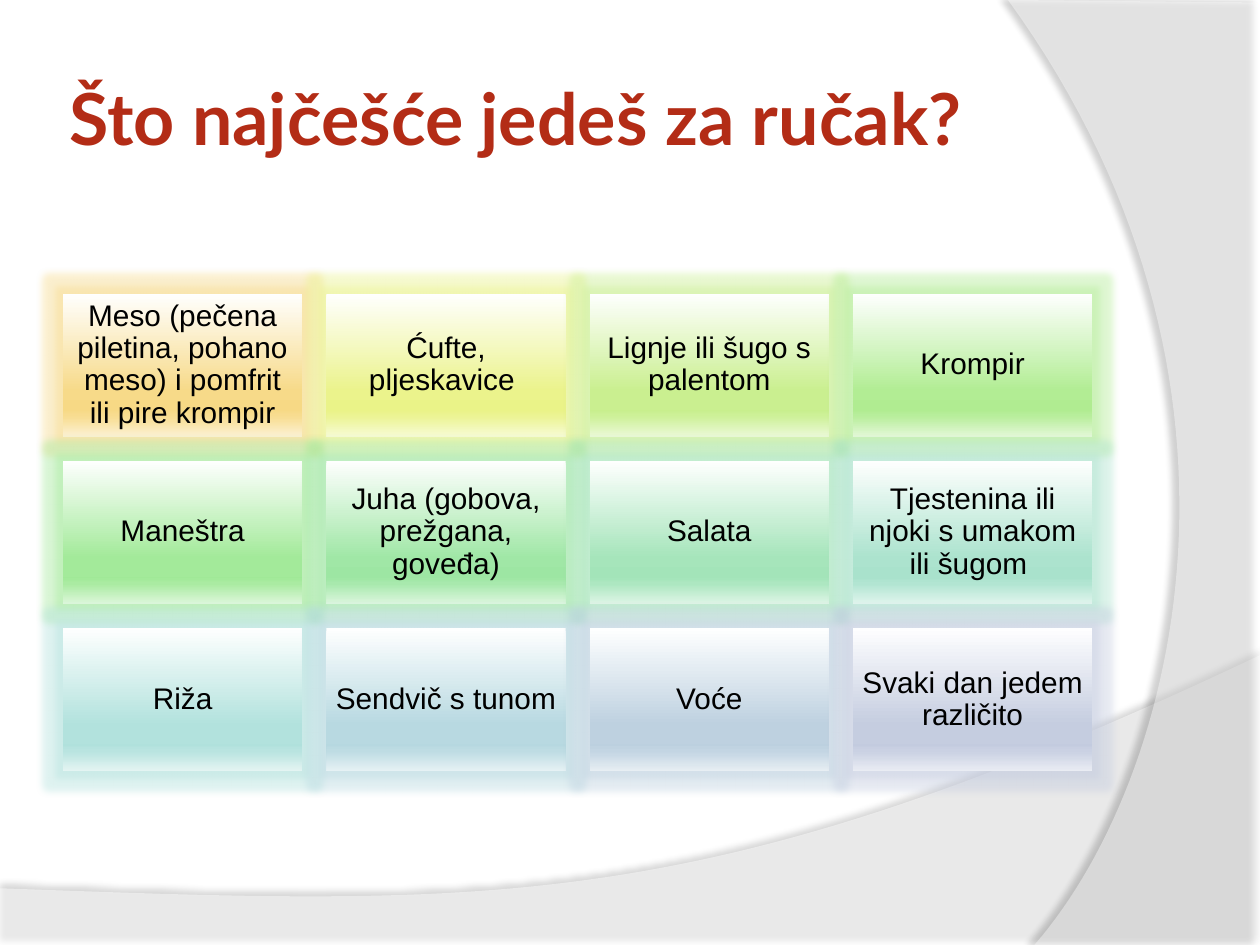
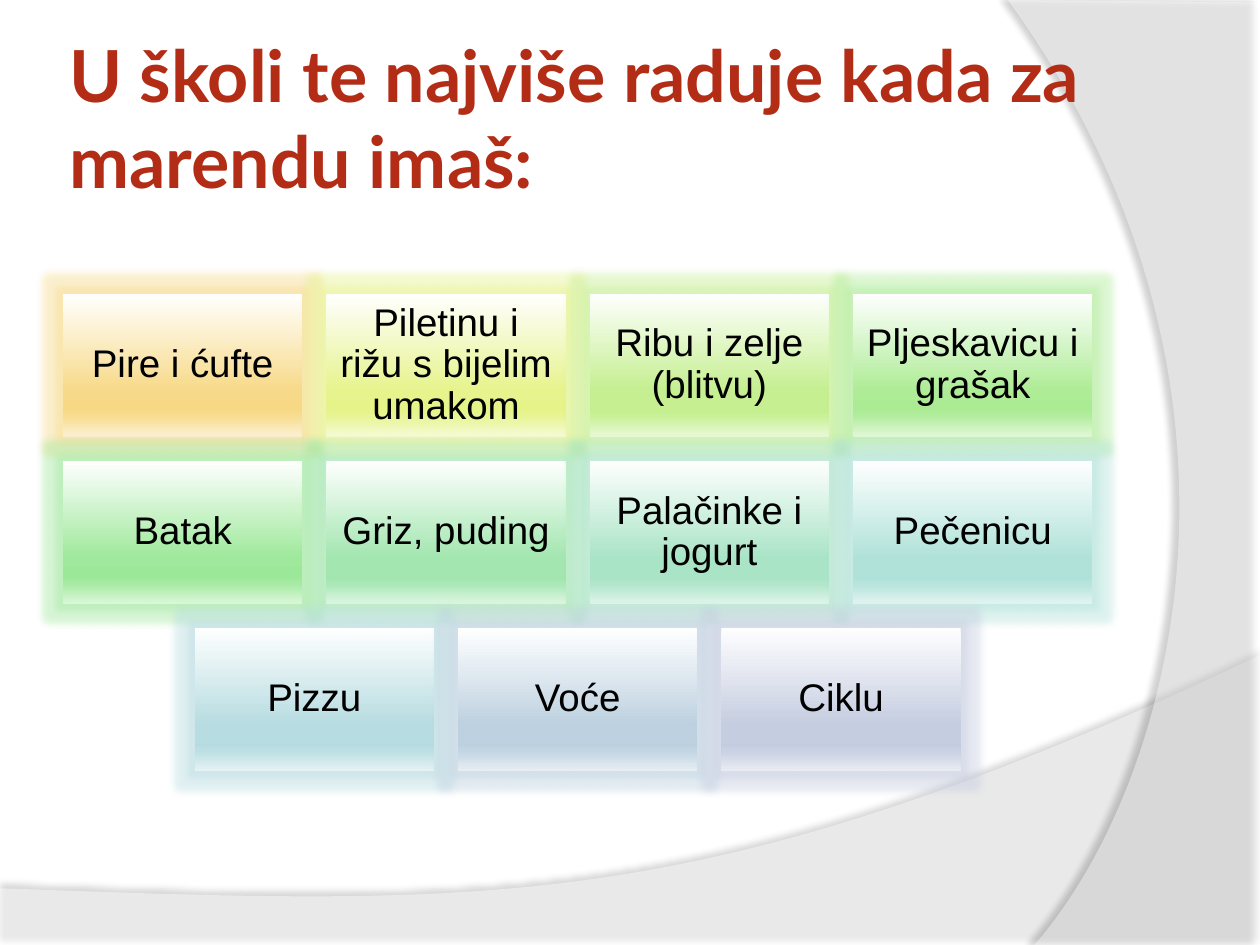
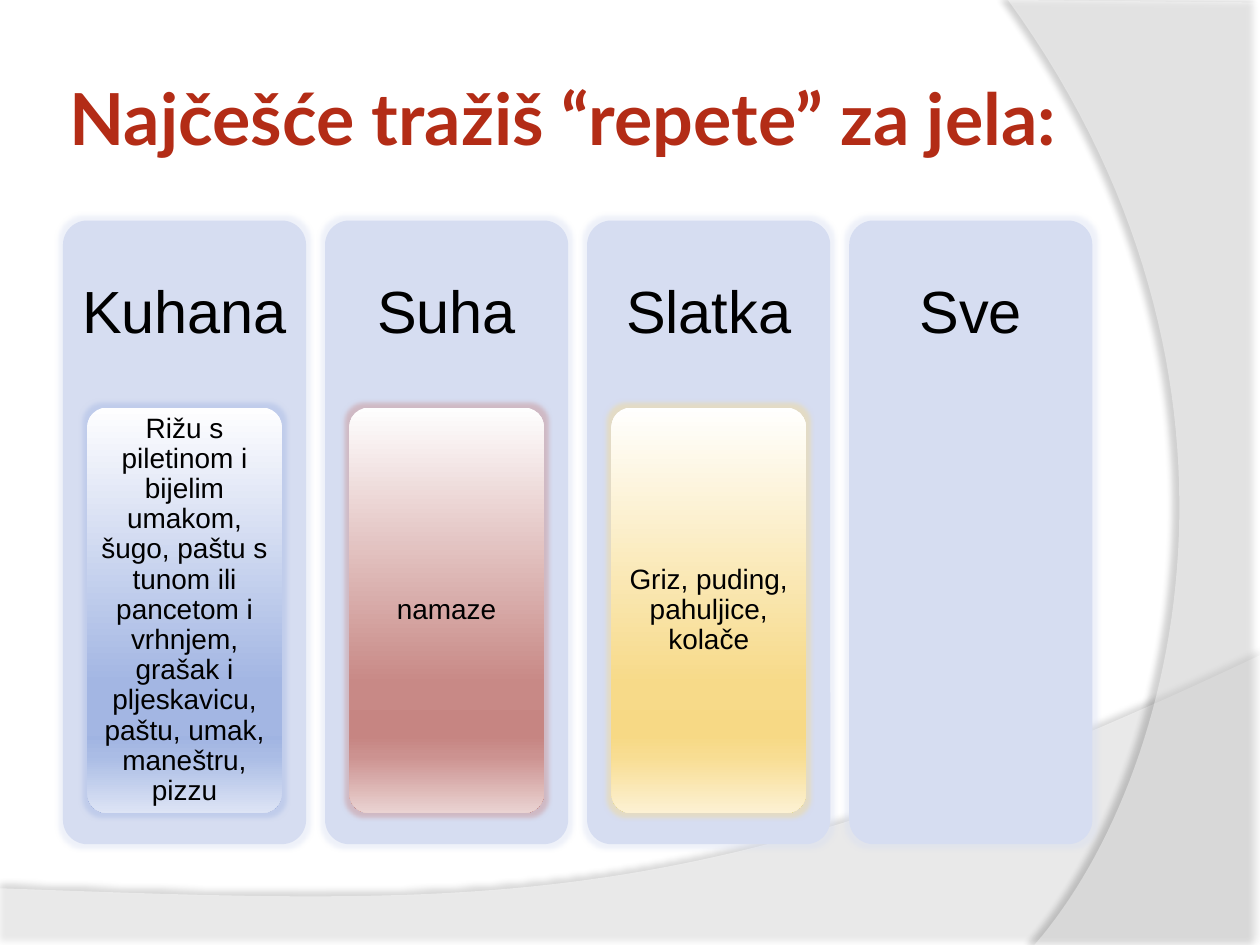
from dataclasses import dataclass
from typing import NamedTuple

from lxml import etree
from pptx import Presentation
from pptx import util as u
from pptx.dml.color import RGBColor
from pptx.enum import shapes, text
from pptx.oxml.ns import qn


@dataclass(frozen=True)
class Theme:
    heading: str = "B32C16"
    ink: str = "000000"
    paper: str = "FFFFFF"
    panel: str = "D6DDF1"
    heading_font: str = "Lato"
    body_font: str = "Arial"
    heading_size: float = 41
    category_size: float = 34
    dish_size: float = 16
    corner: float = 0.1
    cell_glow: float = 8
    panel_glow: float = 5


class Box(NamedTuple):
    left: float
    top: float
    width: float
    height: float

    def lengths(self) -> list[int]:
        return [u.Inches(side) for side in self]


class Swoosh(NamedTuple):
    corners: list[tuple[float, float]]
    curve: list[tuple[float, float]]
    opacity: int
    shadow_opacity: int
    shadow_distance: float
    shadow_angle: int


class Answer(NamedTuple):
    label: str
    tint: str


class Question(NamedTuple):
    heading: str
    size: float
    inset: float
    answers: list[Answer]


class Category(NamedTuple):
    label: str
    dishes: str = ""
    tint: str = ""


THEME = Theme()
PAGE = Box(0, 0, 10, 7.5)
TITLE_BOX = Box(0.5, 0.3, 8.17, 1.25)
ANSWER_AREA = Box(0.5, 2.33, 8.17, 3.79)
CATEGORY_AREA = Box(0.5, 1.75, 8.17, 4.95)
COLUMNS, ROWS = 4, 3
ANSWER_GAP, CATEGORY_GAP = 0.19, 0.15
LABEL_SHARE, DISH_WIDTH_SHARE, DISH_HEIGHT_SHARE = 0.3, 0.8, 0.65
CURVE_STEPS = 60
WHITE_SHARES = {0: 0.99, 68: 0.03, 81: 0, 86: 0.11, 100: 0.64}

SWOOSHES = [
    Swoosh([(0, 7.05), (0, 7.51), (10, 7.51), (10, 5.2)],
           [(5.59, 7.29), (3.91, 7.19), (0, 7.05)], 45, 35, 3.5, 270),
    Swoosh([(10, 0.02), (10, 7.5), (8.21, 7.5)],
           [(9.35, 6.19), (10.18, 3), (8, 0)], 40, 45, 4, 180),
]

QUESTIONS = [
    Question("Što najčešće jedeš za ručak?", 17, 0.07, [
        Answer("Meso (pečena piletina, pohano meso) i pomfrit ili pire krompir", "F7D985"),
        Answer("Ćufte, pljeskavice ", "EAF388"),
        Answer("Lignje ili šugo s palentom", "C8EF8D"),
        Answer("Krompir", "B0EC91"),
        Answer("Maneštra", "A0E997"),
        Answer("Juha (gobova, prežgana, goveđa)", "9DE6A3"),
        Answer("Salata", "A3E4B9"),
        Answer("Tjestenina ili njoki s umakom ili šugom ", "A9E2CC"),
        Answer("Riža", "B0E1DC"),
        Answer("Sendvič s tunom", "B6D8E0"),
        Answer("Voće", "BCD0DF"),
        Answer("Svaki dan jedem različito", "C3CBDF"),
    ]),
    Question("U školi te najviše raduje kada za marendu imaš:", 22, 0.09, [
        Answer("Pire i ćufte", "F7D985"),
        Answer("Piletinu i rižu s bijelim umakom", "E6F389"),
        Answer("Ribu i zelje (blitvu)", "C3EF8D"),
        Answer("Pljeskavicu i grašak", "ABEB93"),
        Answer("Batak", "9CE899"),
        Answer("Griz, puding", "A0E5AE"),
        Answer("Palačinke i jogurt", "A7E3C5"),
        Answer("Pečenicu", "AEE1D8"),
        Answer("Pizzu", "B5DBE0"),
        Answer("Voće", "BCD0DF"),
        Answer("Ciklu", "C3CBDF"),
    ]),
]

REPEAT_HEADING = "Najčešće tražiš “repete” za jela:"
CATEGORIES = [
    Category("Kuhana", "Rižu s piletinom i bijelim umakom, šugo, paštu s tunom ili "
             "pancetom i vrhnjem, grašak i pljeskavicu, paštu, umak, maneštru, pizzu", "A0B4E2"),
    Category("Suha", "namaze", "C68582"),
    Category("Slatka", "Griz, puding, pahuljice, kolače", "F7D985"),
    Category("Sve"),
]


def write(frame, words: str, *, size: float, font: str = THEME.body_font,
          color: str = THEME.ink, bold: bool = False, align=text.PP_ALIGN.CENTER,
          spacing: float = 0.9, insets: tuple[float, float] = (0.05, 0.05)) -> None:
    frame.auto_size = text.MSO_AUTO_SIZE.NONE
    frame.word_wrap = True
    frame.vertical_anchor = text.MSO_ANCHOR.MIDDLE
    frame.margin_left = frame.margin_right = u.Inches(insets[0])
    frame.margin_top = frame.margin_bottom = u.Inches(insets[1])
    paragraph = frame.paragraphs[0]
    paragraph.alignment = align
    paragraph.line_spacing = spacing
    run = paragraph.add_run()
    run.text = words
    run.font.name = font
    run.font.size = u.Pt(size)
    run.font.bold = bold
    run.font.color.rgb = RGBColor.from_string(color)


def add_color(parent, color: str, **changes: int) -> None:
    node = etree.SubElement(parent, qn("a:srgbClr"), val=color)
    for change, percent in changes.items():
        etree.SubElement(node, qn(f"a:{change}"), val=str(percent * 1000))


def add_effect(shape, effect: str, color: str, opacity: int, **settings: int) -> None:
    shape.shadow.inherit = False
    effects = shape.element.spPr.find(qn("a:effectLst"))
    node = etree.SubElement(effects, qn(f"a:{effect}"),
                            {key: str(value) for key, value in settings.items()})
    add_color(node, color, alpha=opacity)


def fill_plain(shape, color: str) -> None:
    shape.fill.solid()
    shape.fill.fore_color.rgb = RGBColor.from_string(color)
    shape.line.fill.background()


def lighten(color: str, share: float) -> str:
    return str(RGBColor(*(round(c + (255 - c) * share) for c in RGBColor.from_string(color))))


def fill_gloss(shape, tint: str) -> None:
    shape.fill.gradient()
    shape.fill.gradient_angle = 270
    shape.line.fill.background()
    stops = next(shape.element.spPr.iter(qn("a:gsLst")))
    for stop in list(stops):
        stops.remove(stop)
    for position, share in WHITE_SHARES.items():
        stop = etree.SubElement(stops, qn("a:gs"), pos=str(position * 1000))
        add_color(stop, lighten(tint, share))


def add_panel(slide, kind, box: Box, tint: str, *, gloss: bool, glow: float):
    panel = slide.shapes.add_shape(kind, *box.lengths())
    if kind == shapes.MSO_SHAPE.ROUNDED_RECTANGLE:
        panel.adjustments[0] = THEME.corner
    (fill_gloss if gloss else fill_plain)(panel, tint)
    add_effect(panel, "glow", tint, 40, rad=u.Pt(glow))
    return panel


def bezier(start: tuple[float, float], curve: list[tuple[float, float]]):
    for step in range(1, CURVE_STEPS + 1):
        t = step / CURVE_STEPS
        weights = ((1 - t) ** 3, 3 * t * (1 - t) ** 2, 3 * t * t * (1 - t), t ** 3)
        yield tuple(sum(w * point[axis] for w, point in zip(weights, [start, *curve]))
                    for axis in (0, 1))


def add_swooshes(layout, slide) -> None:
    for order, swoosh in enumerate(SWOOSHES):
        outline = [*swoosh.corners, *bezier(swoosh.corners[-1], swoosh.curve)]
        points = [(u.Inches(x), u.Inches(y)) for x, y in outline]
        builder = slide.shapes.build_freeform(*points[0])
        builder.add_line_segments(points[1:], close=True)
        band = builder.convert_to_shape()
        fill_plain(band, THEME.paper)
        color = next(band.element.spPr.iter(qn("a:srgbClr")))
        etree.SubElement(color, qn("a:alpha"), val=str(swoosh.opacity * 1000))
        add_effect(band, "outerShdw", THEME.ink, swoosh.shadow_opacity, blurRad=u.Pt(4),
                   dist=u.Pt(swoosh.shadow_distance), dir=swoosh.shadow_angle * 60000)
        band.element.nvSpPr.cNvPr.set("id", str(100 + order))
        layout.shapes.element.insert(2 + order, band.element)


def add_titled_slide(deck, layout, heading: str):
    slide = deck.slides.add_slide(layout)
    write(slide.shapes.title.text_frame, heading, size=THEME.heading_size,
          font=THEME.heading_font, color=THEME.heading, bold=True,
          align=text.PP_ALIGN.LEFT, spacing=1.0)
    return slide


def add_answers(slide, question: Question) -> None:
    area = ANSWER_AREA
    width = (area.width - (COLUMNS - 1) * ANSWER_GAP) / COLUMNS
    height = (area.height - (ROWS - 1) * ANSWER_GAP) / ROWS
    for row in range(ROWS):
        answers = question.answers[row * COLUMNS:(row + 1) * COLUMNS]
        indent = (COLUMNS - len(answers)) * (width + ANSWER_GAP) / 2
        for column, answer in enumerate(answers):
            box = Box(area.left + indent + column * (width + ANSWER_GAP),
                      area.top + row * (height + ANSWER_GAP), width, height)
            cell = add_panel(slide, shapes.MSO_SHAPE.RECTANGLE, box, answer.tint,
                             gloss=True, glow=THEME.cell_glow)
            write(cell.text_frame, answer.label, size=question.size,
                  insets=(question.inset, question.inset))


def add_categories(slide) -> None:
    area = CATEGORY_AREA
    width = (area.width - (COLUMNS - 1) * CATEGORY_GAP) / COLUMNS
    label_height = area.height * LABEL_SHARE
    rounded = shapes.MSO_SHAPE.ROUNDED_RECTANGLE
    for column, category in enumerate(CATEGORIES):
        left = area.left + column * (width + CATEGORY_GAP)
        add_panel(slide, rounded, Box(left, area.top, width, area.height), THEME.panel,
                  gloss=False, glow=THEME.panel_glow)
        label = slide.shapes.add_textbox(*Box(left, area.top, width, label_height).lengths())
        write(label.text_frame, category.label, size=THEME.category_size, insets=(0.14, 0.14))
        if category.dishes:
            box = Box(left + width * (1 - DISH_WIDTH_SHARE) / 2, area.top + label_height,
                      width * DISH_WIDTH_SHARE, area.height * DISH_HEIGHT_SHARE)
            dishes = add_panel(slide, rounded, box, category.tint,
                               gloss=True, glow=THEME.panel_glow)
            write(dishes.text_frame, category.dishes, size=THEME.dish_size, insets=(0.04, 0.03))


def main() -> None:
    deck = Presentation()
    deck.slide_width, deck.slide_height = u.Inches(PAGE.width), u.Inches(PAGE.height)
    layout = deck.slide_layouts.get_by_name("Title Only")
    heading = layout.placeholders[0]
    heading.left, heading.top, heading.width, heading.height = TITLE_BOX.lengths()
    for question in QUESTIONS:
        add_answers(add_titled_slide(deck, layout, question.heading), question)
    add_categories(add_titled_slide(deck, layout, REPEAT_HEADING))
    add_swooshes(layout, deck.slides[0])
    deck.save("out.pptx")


if __name__ == "__main__":
    main()
